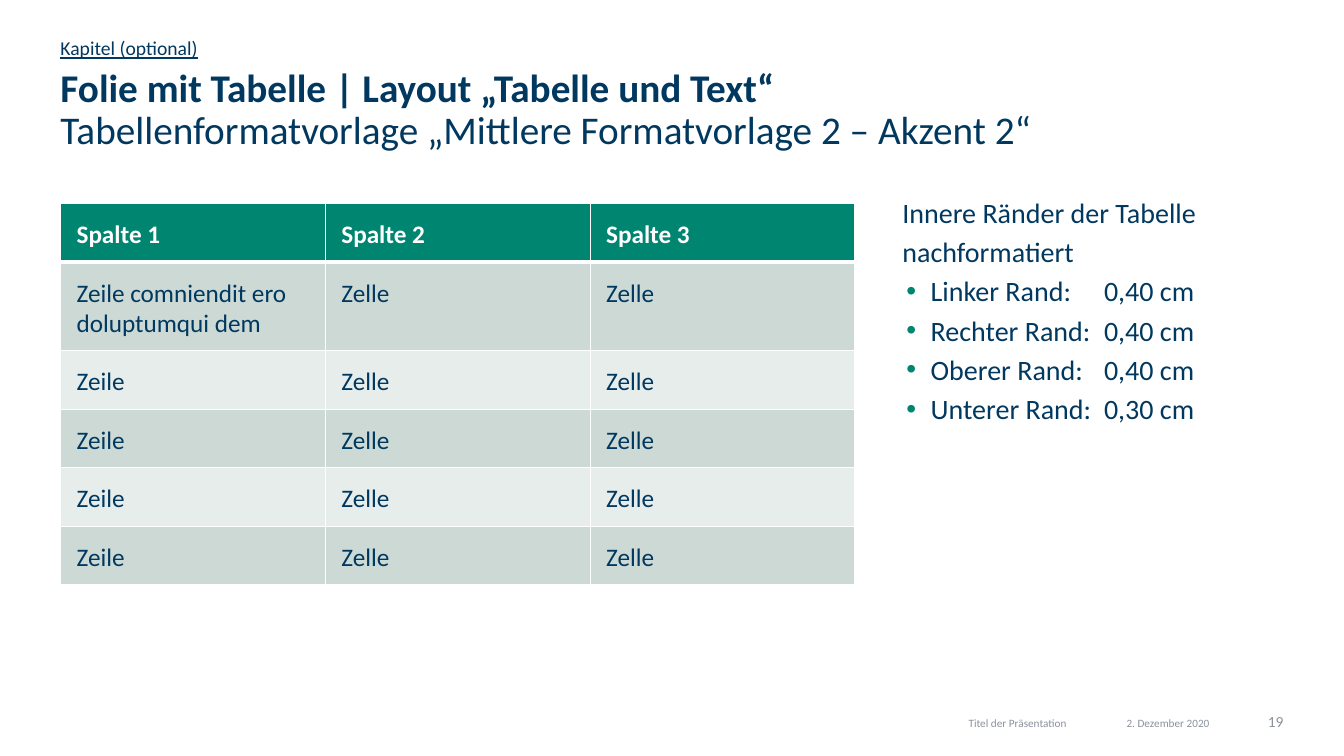
from lxml.etree import SubElement
from pptx import Presentation
from pptx.dml.color import RGBColor
from pptx.enum.text import MSO_ANCHOR as Anchor, PP_ALIGN as Align
from pptx.oxml.ns import qn
from pptx.util import Pt

PX = 9144  # 100 px to the inch
FONT = "Calibri"
NAVY = RGBColor(0x00, 0x38, 0x5F)
GREEN = RGBColor(0x00, 0x85, 0x70)
SAGE = RGBColor(0xCC, 0xD9, 0xD5)
PALE = RGBColor(0xE7, 0xED, 0xEB)
GRAY = RGBColor(0x8C, 0x91, 0x9D)
WHITE = RGBColor(0xFF, 0xFF, 0xFF)

LEFT, WIDTH = 60, 1213
HEADER = ["Spalte 1", "Spalte 2", "Spalte 3"]
ROWS = [["Zeile comniendit ero doluptumqui dem", "Zelle", "Zelle"]]
ROWS += [["Zeile", "Zelle", "Zelle"]] * 4
MARGINS = [("Linker Rand:", "0,40 cm"), ("Rechter Rand:", "0,40 cm"),
           ("Oberer Rand:", "0,40 cm"), ("Unterer Rand:", "0,30 cm")]


def px(*lengths):
    return [round(length * PX) for length in lengths]


def write(paragraph, text, size=18, color=NAVY, bold=False, underline=False,
          align=Align.LEFT, spacing=None):
    paragraph.alignment = align
    if spacing:
        paragraph.line_spacing = spacing
    run = paragraph.add_run()
    run.text = text
    font = run.font
    font.name, font.size, font.bold, font.underline = FONT, Pt(size), bold, underline
    font.color.rgb = color


def set_frame(frame, insets=(0, 0, 0, 0), anchor=Anchor.TOP):
    frame.word_wrap = True
    frame.vertical_anchor = anchor
    (frame.margin_left, frame.margin_top,
     frame.margin_right, frame.margin_bottom) = px(*insets)
    return frame


def add_text(slide, box, text, insets=(0, 0, 0, 0), anchor=Anchor.TOP, **style):
    frame = set_frame(slide.shapes.add_textbox(*px(*box)).text_frame, insets, anchor)
    write(frame.paragraphs[0], text, **style)
    return frame


def add_heading(slide, left, top, width):
    add_text(slide, (left, top, width, 31), "Kapitel (optional)", (0, 0, 0, 1),
             Anchor.BOTTOM, size=14, underline=True, spacing=1.17)
    title = slide.shapes.title
    title.left, title.top, title.width, title.height = px(left, top + 39, width, 94)
    paragraph = set_frame(title.text_frame).paragraphs[0]
    write(paragraph, "Folie mit Tabelle | Layout „Tabelle und Text“",
          size=28, bold=True, spacing=0.9)
    paragraph.add_line_break()
    write(paragraph, "Tabellenformatvorlage „Mittlere Formatvorlage 2 – Akzent 2“",
          size=28)


def set_borders(cell, top, bottom):
    """Draw white borders, with the top and bottom widths in points."""
    properties = cell._tc.get_or_add_tcPr()
    for side, width in (("L", 1), ("R", 1), ("T", top), ("B", bottom)):
        line = SubElement(properties, qn(f"a:ln{side}"), w=str(Pt(width)))
        fill = SubElement(line, qn("a:solidFill"))
        SubElement(fill, qn("a:srgbClr"), val=str(WHITE))


def add_margin_table(slide, left, top, width):
    rows = [HEADER] + ROWS
    heights = [58, 88, 58, 58, 58, 58]
    table = slide.shapes.add_table(len(rows), len(HEADER),
                                   *px(left, top, width, sum(heights))).table
    for row, height in zip(table.rows, heights):
        row.height = px(height)[0]
    for r, texts in enumerate(rows):
        fill = GREEN if r == 0 else SAGE if r % 2 else PALE
        for c, text in enumerate(texts):
            cell = table.cell(r, c)
            (cell.margin_left, cell.margin_top,
             cell.margin_right, cell.margin_bottom) = px(16, 16, 16, 12)
            set_borders(cell, top=3 if r == 1 else 1, bottom=3 if r == 0 else 1)
            cell.fill.solid()
            cell.fill.fore_color.rgb = fill
            write(cell.text_frame.paragraphs[0], text,
                  color=NAVY if r else WHITE, bold=r == 0)


def add_bullet(paragraph, indent, hanging, tab):
    properties = paragraph._p.get_or_add_pPr()
    margin, first, stop = px(indent, -hanging, tab)
    properties.set("marL", str(margin))
    properties.set("indent", str(first))
    color = SubElement(properties, qn("a:buClr"))
    SubElement(color, qn("a:srgbClr"), val=str(GREEN))
    SubElement(properties, qn("a:buFont"), typeface="Arial")
    SubElement(properties, qn("a:buChar"), char="•")
    tabs = SubElement(properties, qn("a:tabLst"))
    SubElement(tabs, qn("a:tab"), pos=str(stop), algn="l")


def add_margin_notes(slide, left, top, width, height):
    frame = add_text(slide, (left, top, width, height),
                     "Innere Ränder der Tabelle nachformatiert", (0, 2, 0, 0),
                     size=20, spacing=1.17)
    for label, value in MARGINS:
        paragraph = frame.add_paragraph()
        paragraph.level = 3
        add_bullet(paragraph, indent=28, hanging=24, tab=200)
        write(paragraph, f"{label}\t{value}", size=20, spacing=1.17)


def add_footer(slide, right, top):
    add_text(slide, (right - 685, top, 472, 16), "Titel der Präsentation",
             (0, 5, 2, 0), size=8, color=GRAY, align=Align.RIGHT)
    add_text(slide, (right - 197, top, 165, 16), "2. Dezember 2020",
             (0, 5, 0, 0), size=8, color=GRAY, align=Align.CENTER)
    add_text(slide, (right - 32, top, 32, 16), "19",
             (0, 1, 0, 0), size=11, color=GRAY, align=Align.RIGHT)


def main():
    presentation = Presentation()
    presentation.slide_width, presentation.slide_height = px(1333, 750)
    slide = presentation.slides.add_slide(presentation.slide_layouts[5])
    add_heading(slide, LEFT, 29, WIDTH)
    add_margin_table(slide, LEFT, 202, 788)
    add_margin_notes(slide, LEFT + 835, 186, WIDTH - 835, 488)
    add_footer(slide, LEFT + WIDTH, 706)
    presentation.save("out.pptx")


if __name__ == "__main__":
    main()
